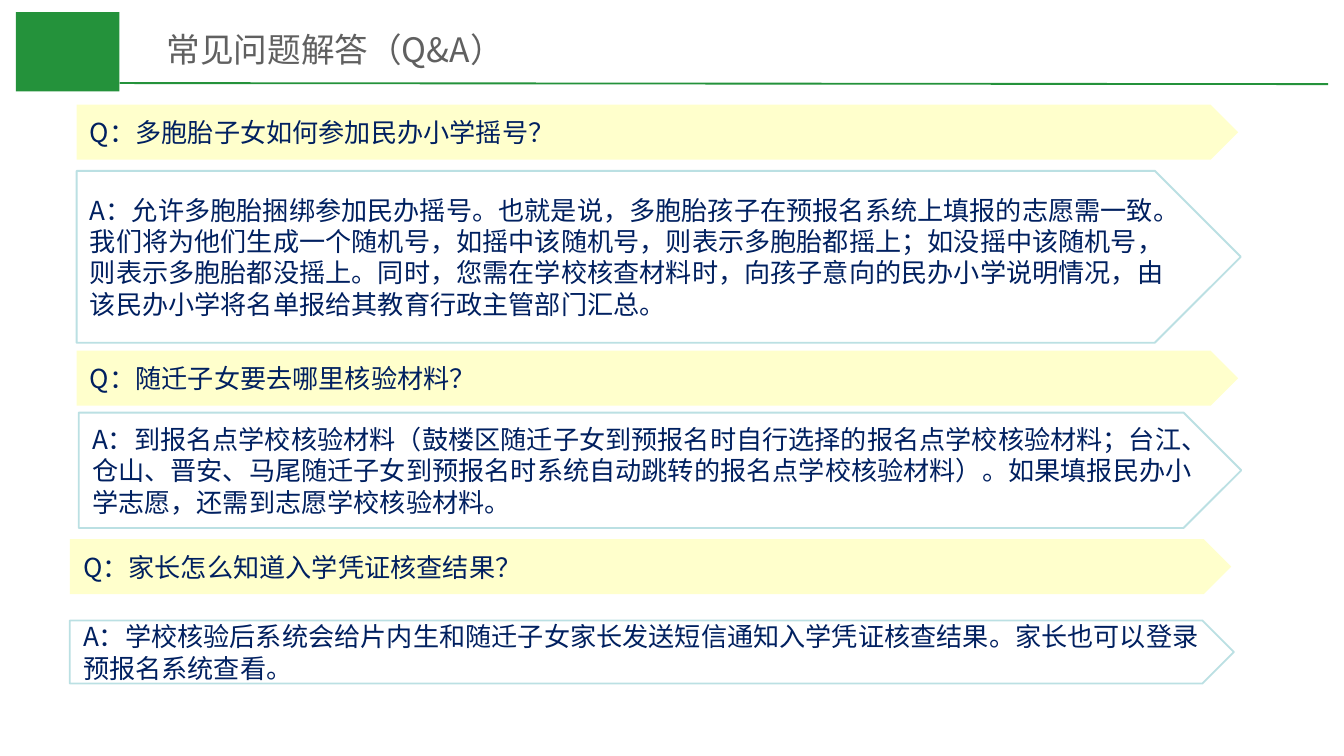
from lxml import etree
from pptx import Presentation
from pptx import util as u
from pptx.dml.color import RGBColor
from pptx.enum import shapes, text
from pptx.oxml.ns import qn

FONT = "Noto Sans CJK SC"
COLORS = {
    "green": "24923B",
    "title": "606060",
    "text": "002060",
    "question": "FFFFCC",
    "border": "BBE0E3",
}
QUESTION_SIZE = (21.95, 1.04)

QUESTIONS = [
    (1.45, 1.98, "Q：多胞胎子女如何参加民办小学摇号？"),
    (1.45, 6.63, "Q：随迁子女要去哪里核验材料？"),
    (1.32, 10.19, "Q：家长怎么知道入学凭证核查结果？"),
]
ANSWERS = [
    (1.45, 3.23, 22, 3.25,
     "A：允许多胞胎捆绑参加民办摇号。也就是说，多胞胎孩子在预报名系统上填报的志愿需一致。"
     "我们将为他们生成一个随机号，如摇中该随机号，则表示多胞胎都摇上；如没摇中该随机号，"
     "则表示多胞胎都没摇上。同时，您需在学校核查材料时，向孩子意向的民办小学说明情况，"
     "由该民办小学将名单报给其教育行政主管部门汇总。"),
    (1.49, 7.8, 21.97, 2.18,
     "A：到报名点学校核验材料（鼓楼区随迁子女到预报名时自行选择的报名点学校核验材料；"
     "台江、仓山、晋安、马尾随迁子女到预报名时系统自动跳转的报名点学校核验材料）。"
     "如果填报民办小学志愿，还需到志愿学校核验材料。"),
    (1.32, 11.73, 22, 1.19,
     "A：学校核验后系统会给片内生和随迁子女家长发送短信通知入学凭证核查结果。"
     "家长也可以登录预报名系统查看。"),
]


def color(name):
    return RGBColor.from_string(COLORS[name])


def write(box, words, size, color_name, anchor):
    frame = box.text_frame
    frame.word_wrap = True
    frame.vertical_anchor = anchor
    frame.text = words
    para = frame.paragraphs[0]
    para.alignment = text.PP_ALIGN.LEFT
    for span in para.runs:
        span.font.size = u.Pt(size)
        span.font.name = FONT
        span.font.color.rgb = color(color_name)
        east_asian = etree.SubElement(span.font._element, qn("a:ea"))
        east_asian.set("typeface", FONT)


def add_block(page, kind, left, top, width, height, fill=None, border=None):
    block = page.shapes.add_shape(
        kind, u.Cm(left), u.Cm(top), u.Cm(width), u.Cm(height))
    block.shadow.inherit = False
    if fill:
        block.fill.solid()
        block.fill.fore_color.rgb = color(fill)
    else:
        block.fill.background()
    if border:
        block.line.color.rgb = color(border)
        block.line.width = u.Pt(1)
    else:
        block.line.fill.background()
    return block


def add_arrow_box(page, left, top, width, height, words, **style):
    box = add_block(page, shapes.MSO_SHAPE.PENTAGON,
                    left, top, width, height, **style)
    write(box, words, 14, "text", text.MSO_ANCHOR.MIDDLE)


def add_header(page):
    add_block(page, shapes.MSO_SHAPE.RECTANGLE, 0.3, 0.23, 1.96, 1.5, fill="green")
    rule = page.shapes.add_connector(
        shapes.MSO_CONNECTOR.STRAIGHT,
        u.Cm(2.26), u.Cm(1.57), u.Cm(25.1), u.Cm(1.59))
    rule.line.color.rgb = color("green")
    rule.line.width = u.Pt(1)
    etree.SubElement(rule._element.spPr, qn("a:effectLst"))
    title = page.shapes.add_textbox(u.Cm(2.9), u.Cm(0.36), u.Cm(21.59), u.Cm(1.07))
    write(title, "常见问题解答（Q&A）", 18, "title", text.MSO_ANCHOR.BOTTOM)


def main():
    deck = Presentation()
    deck.slide_width, deck.slide_height = u.Cm(25.4), u.Cm(14.29)
    page = deck.slides.add_slide(deck.slide_layouts[6])
    add_header(page)
    for (left, top, question), (*place, answer) in zip(QUESTIONS, ANSWERS):
        add_arrow_box(page, left, top, *QUESTION_SIZE, question, fill="question")
        add_arrow_box(page, *place, answer, border="border")
    deck.save("out.pptx")


if __name__ == "__main__":
    main()
